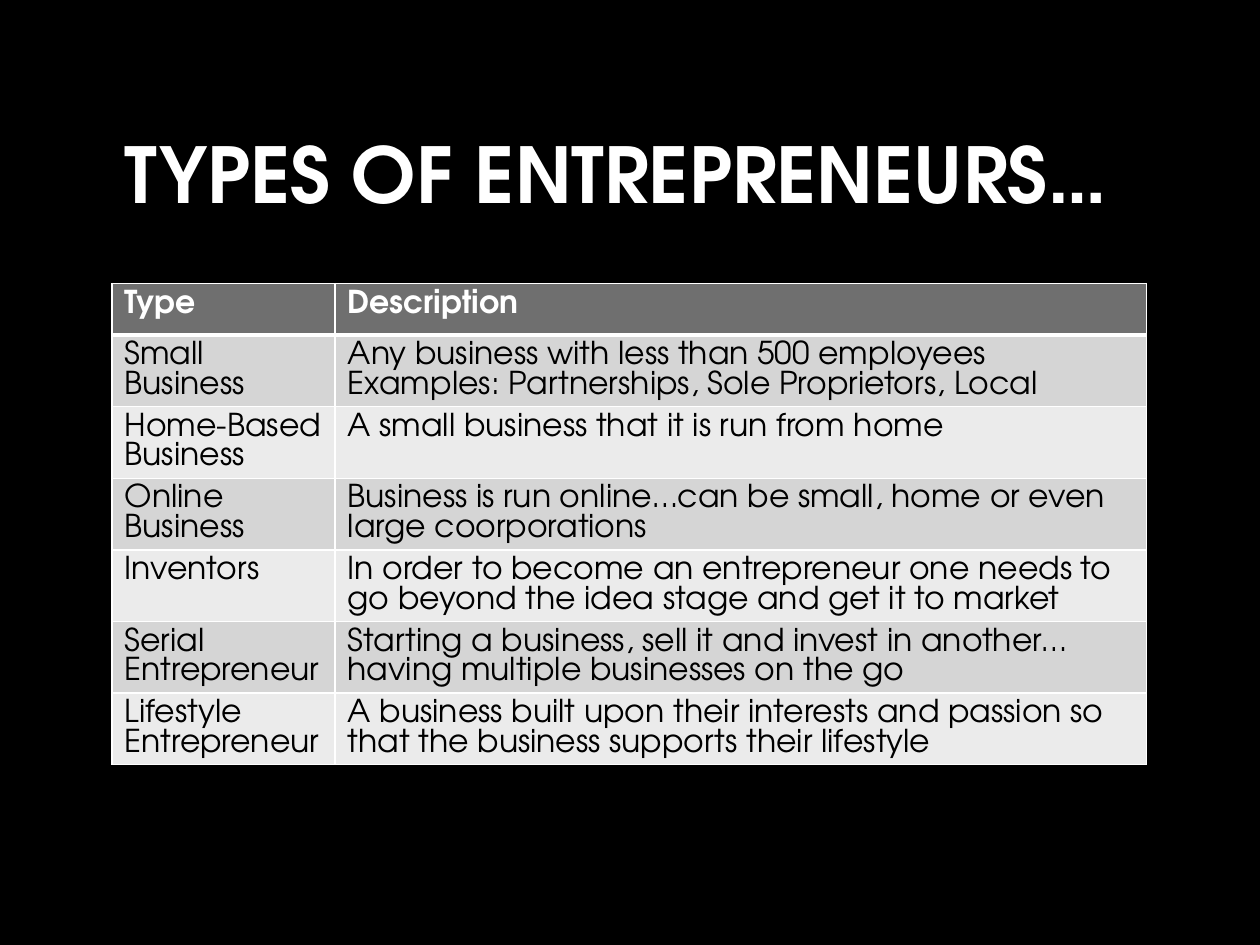
from lxml.etree import SubElement
from pptx import Presentation
from pptx.dml.color import RGBColor
from pptx.enum.text import MSO_ANCHOR as Anchor, PP_ALIGN as Align
from pptx.oxml.ns import qn
from pptx.util import Inches, Pt

BLACK = RGBColor(0x00, 0x00, 0x00)
WHITE = RGBColor(0xFF, 0xFF, 0xFF)
HEADER_GRAY = RGBColor(0x6F, 0x6F, 0x6F)
BANDS = (RGBColor(0xD5, 0xD5, 0xD5), RGBColor(0xEB, 0xEB, 0xEB))

COLUMN_WIDTHS = (1.77, 6.44)
ROW_HEIGHT = 0.41
ROWS = [
    ("Type", "Description"),
    ("Small Business",
     "Any business with less than 500 employees\n"
     "Examples: Partnerships, Sole Proprietors, Local"),
    ("Home-Based\nBusiness", "A small business that it is run from home"),
    ("Online Business",
     "Business is run online…can be small, home or even large coorporations"),
    ("Inventors",
     "In order to become an entrepreneur one needs to go beyond the idea "
     "stage and get it to market"),
    ("Serial Entrepreneur",
     "Starting a business, sell it and invest in another…having multiple "
     "businesses on the go"),
    ("Lifestyle Entrepreneur",
     "A business built upon their interests and passion so that the business "
     "supports their lifestyle"),
]


def write_text(frame, text, size=18, color=BLACK, bold=False, spacing=None):
    """Fill a text frame, one paragraph for each line of text."""
    frame.text = text
    frame.word_wrap = True
    for paragraph in frame.paragraphs:
        paragraph.alignment = Align.LEFT
        paragraph.line_spacing = spacing
        font = paragraph.runs[0].font
        font.name = SlideBuilder.FONT
        font.size = Pt(size)
        font.bold = bold
        font.color.rgb = color


class SlideBuilder:
    FONT = "TeX Gyre Adventor"

    def __init__(self, slide):
        self.slide = slide
        fill = slide.background.fill
        fill.solid()
        fill.fore_color.rgb = BLACK

    def title(self, text, left, top, width, height):
        shape = self.slide.shapes.title
        shape.left, shape.top = Inches(left), Inches(top)
        shape.width, shape.height = Inches(width), Inches(height)
        write_text(shape.text_frame, text, size=44, color=WHITE, bold=True)
        shape.text_frame.vertical_anchor = Anchor.MIDDLE

    def borders(self, cell, **widths):
        properties = cell._tc.get_or_add_tcPr()
        for side in "LRTB":
            line = SubElement(properties, qn(f"a:ln{side}"),
                              w=str(Pt(widths.get(side, 1))))
            fill = SubElement(line, qn("a:solidFill"))
            SubElement(fill, qn("a:srgbClr"), val=str(WHITE))

    def table(self, rows, left, top):
        table = self.slide.shapes.add_table(
            len(rows), len(COLUMN_WIDTHS), Inches(left), Inches(top),
            Inches(sum(COLUMN_WIDTHS)), Inches(ROW_HEIGHT * len(rows))).table
        for column, width in zip(table.columns, COLUMN_WIDTHS):
            column.width = Inches(width)
        for row_index, texts in enumerate(rows):
            header = row_index == 0
            for column_index, text in enumerate(texts):
                cell = table.cell(row_index, column_index)
                write_text(cell.text_frame, text, bold=header,
                           color=WHITE if header else BLACK,
                           spacing=Pt(16.85))
                # A thick rule separates the header from the body
                self.borders(cell, B=3 if header else 1,
                             T=3 if row_index == 1 else 1)
                cell.fill.solid()
                cell.fill.fore_color.rgb = (
                    HEADER_GRAY if header else BANDS[(row_index - 1) % 2])


def main():
    presentation = Presentation()
    presentation.slide_width = Inches(10)
    presentation.slide_height = Inches(7.5)
    layout = presentation.slide_layouts.get_by_name("Title Only")
    builder = SlideBuilder(presentation.slides.add_slide(layout))

    # Title
    builder.title("TYPES OF ENTREPRENEURS…", 0.89, 0.65, 8.21, 1.44)

    # Table of entrepreneur types
    builder.table(ROWS, 0.89, 2.25)

    presentation.save("out.pptx")


if __name__ == "__main__":
    main()
